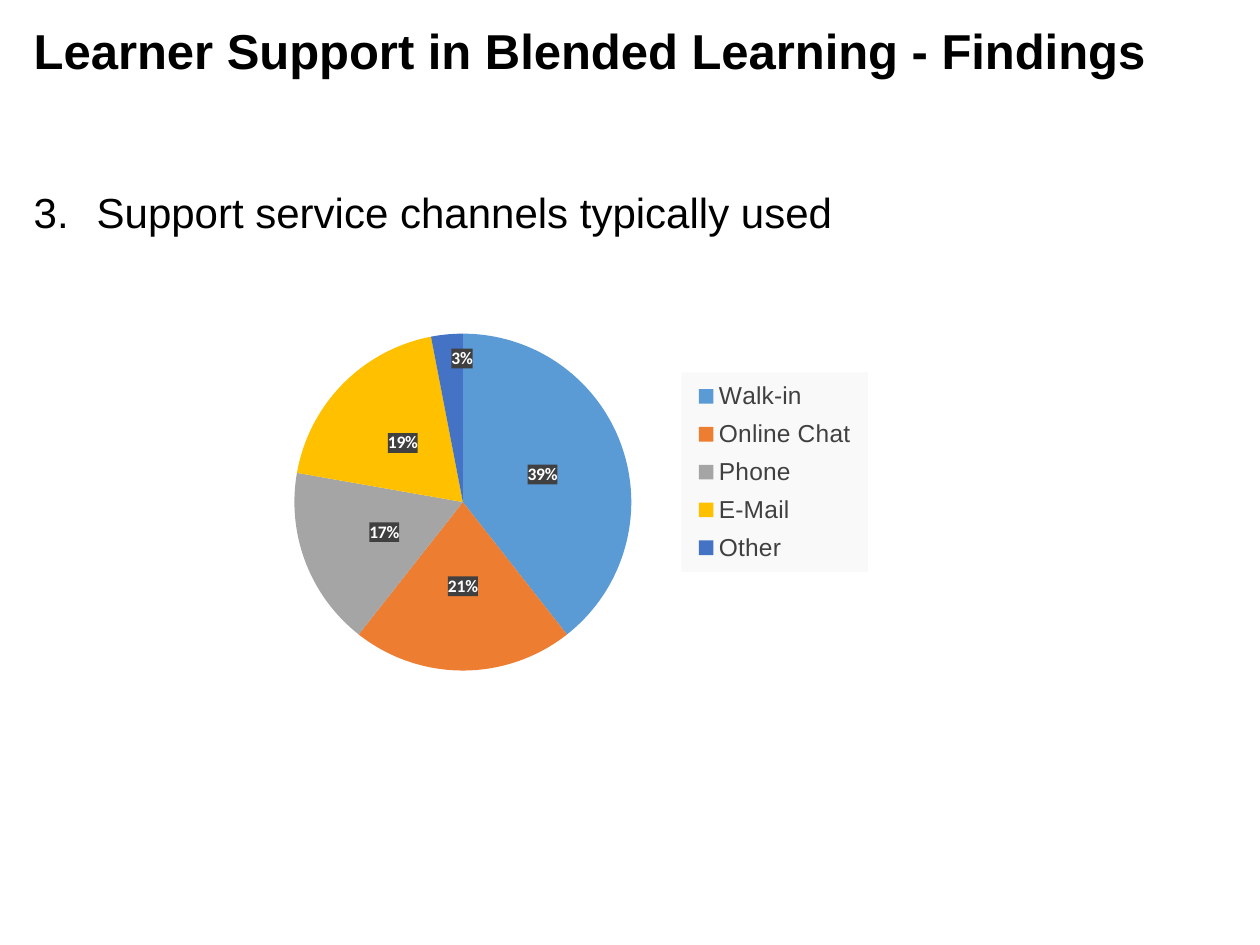
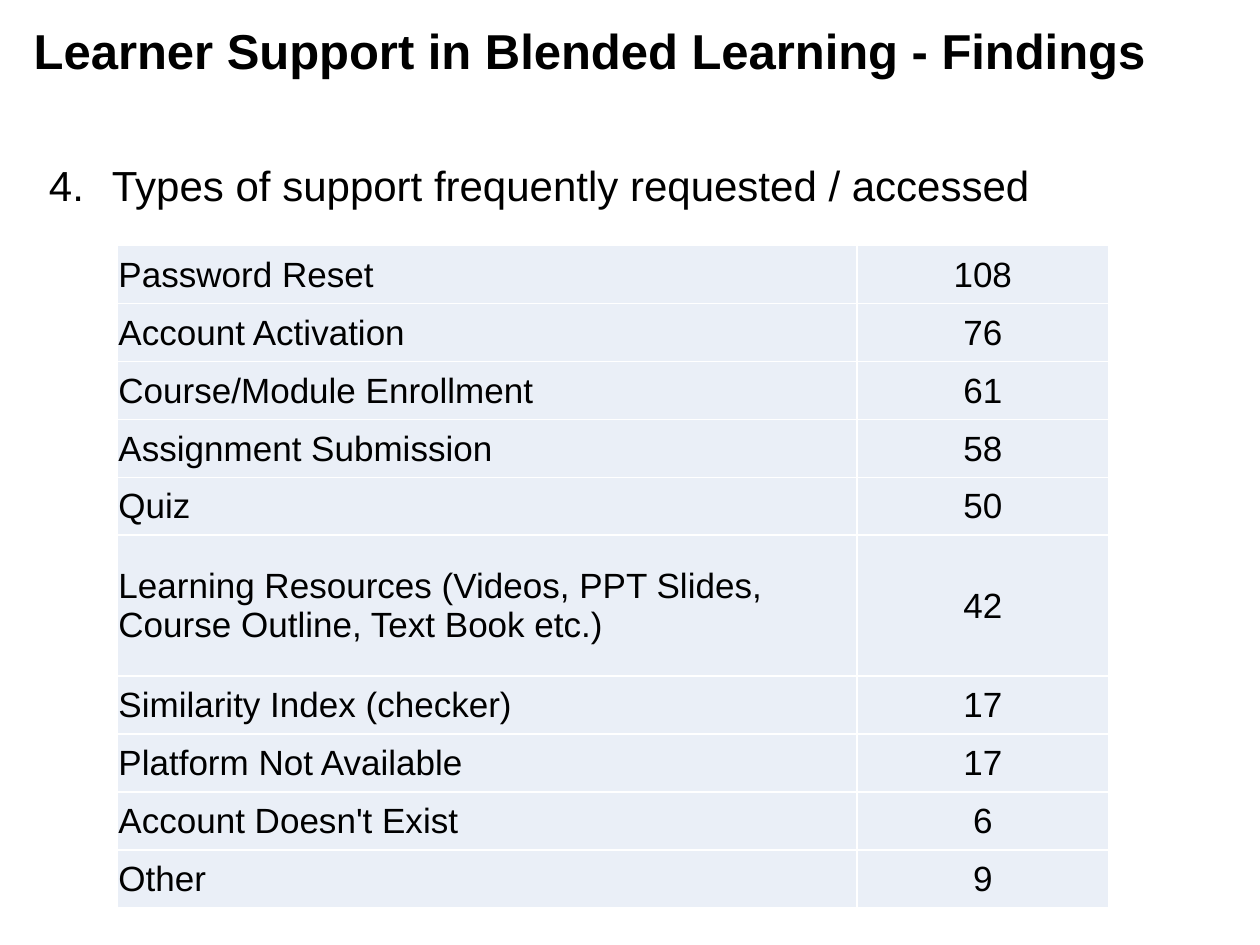
"""Builds two slides of findings on learner support: a channel pie and a request table."""
from copy import deepcopy

from lxml import etree
from pptx import Presentation
from pptx.chart.data import CategoryChartData
from pptx.dml.color import RGBColor
from pptx.enum import chart as charts, text
from pptx.oxml import parse_xml
from pptx.oxml.ns import nsdecls, qn
from pptx.util import Pt

TITLE = "Learner Support in Blended Learning - Findings"
CHANNELS_HEADING = "Support service channels typically used"
REQUESTS_HEADING = "Types of support frequently requested / accessed"

BLACK = RGBColor(0x00, 0x00, 0x00)
WHITE = RGBColor(0xFF, 0xFF, 0xFF)
DARK_GREY = RGBColor(0x40, 0x40, 0x40)
PALE_GREY = RGBColor(0xF9, 0xF9, 0xF9)
PALE_BLUE = RGBColor(0xEA, 0xEF, 0xF7)

CHANNELS = [
    ("Walk-in", 39, RGBColor(0x5B, 0x9B, 0xD5)),
    ("Online Chat", 21, RGBColor(0xED, 0x7D, 0x31)),
    ("Phone", 17, RGBColor(0xA5, 0xA5, 0xA5)),
    ("E-Mail", 19, RGBColor(0xFF, 0xC0, 0x00)),
    ("Other", 3, RGBColor(0x44, 0x72, 0xC4)),
]
REQUESTS = [
    ("Password Reset", 108),
    ("Account Activation", 76),
    ("Course/Module Enrollment", 61),
    ("Assignment Submission", 58),
    ("Quiz", 50),
    ("Learning Resources (Videos, PPT Slides, Course Outline, Text Book etc.)", 42),
    ("Similarity Index (checker)", 17),
    ("Platform Not Available", 17),
    ("Account Doesn't Exist", 6),
    ("Other", 9),
]
COLUMN_WIDTHS = (422.6, 144)
ROW_HEIGHT, TALL_ROW_HEIGHT = 33.1, 80.6
LONG_LABEL = 40


def style(font, size, color=BLACK, bold=False, name="Arial"):
    font.name, font.size, font.bold = name, Pt(size), bold
    font.color.rgb = color


def add_text(page, words, left, top, width, height, size, bold=False, number=None):
    box = page.shapes.add_textbox(Pt(left), Pt(top), Pt(width), Pt(height))
    frame = box.text_frame
    frame.word_wrap = True
    frame.auto_size = text.MSO_AUTO_SIZE.SHAPE_TO_FIT_TEXT
    frame.text = words
    para = frame.paragraphs[0]
    if number:
        properties = para._p.get_or_add_pPr()
        properties.set("marL", str(Pt(36)))
        properties.set("indent", str(Pt(-36)))
        etree.SubElement(properties, qn("a:buFont"), typeface="+mj-lt")
        etree.SubElement(properties, qn("a:buAutoNum"), type="arabicPeriod", startAt=str(number))
    style(para.runs[0].font, size, bold=bold)


def add_page(deck, heading, number, left, top):
    page = deck.slides.add_slide(deck.slide_layouts[6])
    add_text(page, heading, left, top, 707.8, 36, 24, number=number)
    add_text(page, TITLE, 12.2, 8, 680.4, 41, 28, bold=True)
    return page


def manual_layout(**values):
    parts = "".join(f'<c:{key} val="{value}"/>' for key, value in values.items())
    return parse_xml(f'<c:layout {nsdecls("c")}><c:manualLayout>{parts}</c:manualLayout></c:layout>')


def chart_fill(color, alpha=100):
    return parse_xml(
        f'<c:spPr {nsdecls("c", "a")}><a:solidFill><a:srgbClr val="{color}">'
        f'<a:alpha val="{alpha * 1000}"/></a:srgbClr></a:solidFill></c:spPr>')


def place(parent, **values):
    for layout in parent.findall(qn("c:layout")):
        parent.remove(layout)
    position = parent.find(qn("c:legendPos"))
    parent.insert(0 if position is None else 1, manual_layout(**values))


def style_legend(chart):
    chart.has_legend = True
    legend = chart.legend
    legend.position = charts.XL_LEGEND_POSITION.RIGHT
    legend.include_in_layout = False
    style(legend.font, 14, DARK_GREY)
    place(legend._element, xMode="edge", yMode="edge", x=0.68, y=0.21, w=0.26, h=0.5)
    legend._element.find(qn("c:txPr")).addprevious(chart_fill(PALE_GREY))


def style_labels(series):
    labels = series.data_labels
    labels.show_percentage, labels.show_value = True, False
    labels.number_format, labels.number_format_is_linked = "0%", False
    labels.position = charts.XL_LABEL_POSITION.CENTER
    style(labels.font, 10, WHITE, True, "Calibri")
    common = labels._element
    common.find(qn("c:txPr")).addprevious(chart_fill(DARK_GREY, 90))
    raised = etree.Element(qn("c:dLbl"))
    etree.SubElement(raised, qn("c:idx"), val=str(len(CHANNELS) - 1))
    raised.append(manual_layout(x=0.01, y=-0.15))
    for child in common:
        if child.tag != qn("c:showLeaderLines"):
            raised.append(deepcopy(child))
    common.insert(0, raised)


def add_channel_pie(page):
    names, shares, colors = zip(*CHANNELS)
    data = CategoryChartData()
    data.categories = names
    data.add_series("Series 1", shares)
    chart = page.shapes.add_chart(
        charts.XL_CHART_TYPE.PIE, Pt(110.9), Pt(164.9), Pt(409.7), Pt(228.2), data).chart
    style(chart.font, 10, name="Calibri")
    chart.has_title = False
    plot = chart.plots[0]
    plot.vary_by_categories = True
    series = plot.series[0]
    for index, color in enumerate(colors):
        fill = series.points[index].format.fill
        fill.solid()
        fill.fore_color.rgb = color
    style_labels(series)
    style_legend(chart)
    place(chart._chartSpace.find(".//" + qn("c:plotArea")), layoutTarget="inner",
          xMode="edge", yMode="edge", x=0.14, y=0.11, w=0.47, h=0.85)


def style_cell(cell, words, align):
    cell.text = words
    cell.vertical_anchor = text.MSO_ANCHOR.MIDDLE
    cell.margin_left = cell.margin_top = cell.margin_right = Pt(0.7)
    cell.margin_bottom = 0
    cell.fill.solid()
    cell.fill.fore_color.rgb = PALE_BLUE
    para = cell.text_frame.paragraphs[0]
    para.alignment = align
    style(para.runs[0].font, 20)
    properties = cell._tc.get_or_add_tcPr()
    for index, side in enumerate("LRTB"):
        properties.insert(index, parse_xml(
            f'<a:ln{side} {nsdecls("a")} w="{Pt(1)}"><a:solidFill>'
            f'<a:srgbClr val="{WHITE}"/></a:solidFill></a:ln{side}>'))


def add_request_table(page):
    heights = [TALL_ROW_HEIGHT if len(name) > LONG_LABEL else ROW_HEIGHT for name, _ in REQUESTS]
    table = page.shapes.add_table(
        len(REQUESTS), len(COLUMN_WIDTHS), Pt(67), Pt(140.4),
        Pt(sum(COLUMN_WIDTHS)), Pt(sum(heights))).table
    table.first_row = table.horz_banding = False
    for column, width in zip(table.columns, COLUMN_WIDTHS):
        column.width = Pt(width)
    for row, height, (name, count) in zip(table.rows, heights, REQUESTS):
        row.height = Pt(height)
        style_cell(row.cells[0], name, text.PP_ALIGN.LEFT)
        style_cell(row.cells[1], str(count), text.PP_ALIGN.CENTER)


def main():
    deck = Presentation()
    deck.slide_width, deck.slide_height = Pt(720), Pt(540)
    add_channel_pie(add_page(deck, CHANNELS_HEADING, 3, 12.2, 103))
    add_request_table(add_page(deck, REQUESTS_HEADING, 4, 20.9, 87.8))
    deck.save("out.pptx")


if __name__ == "__main__":
    main()
